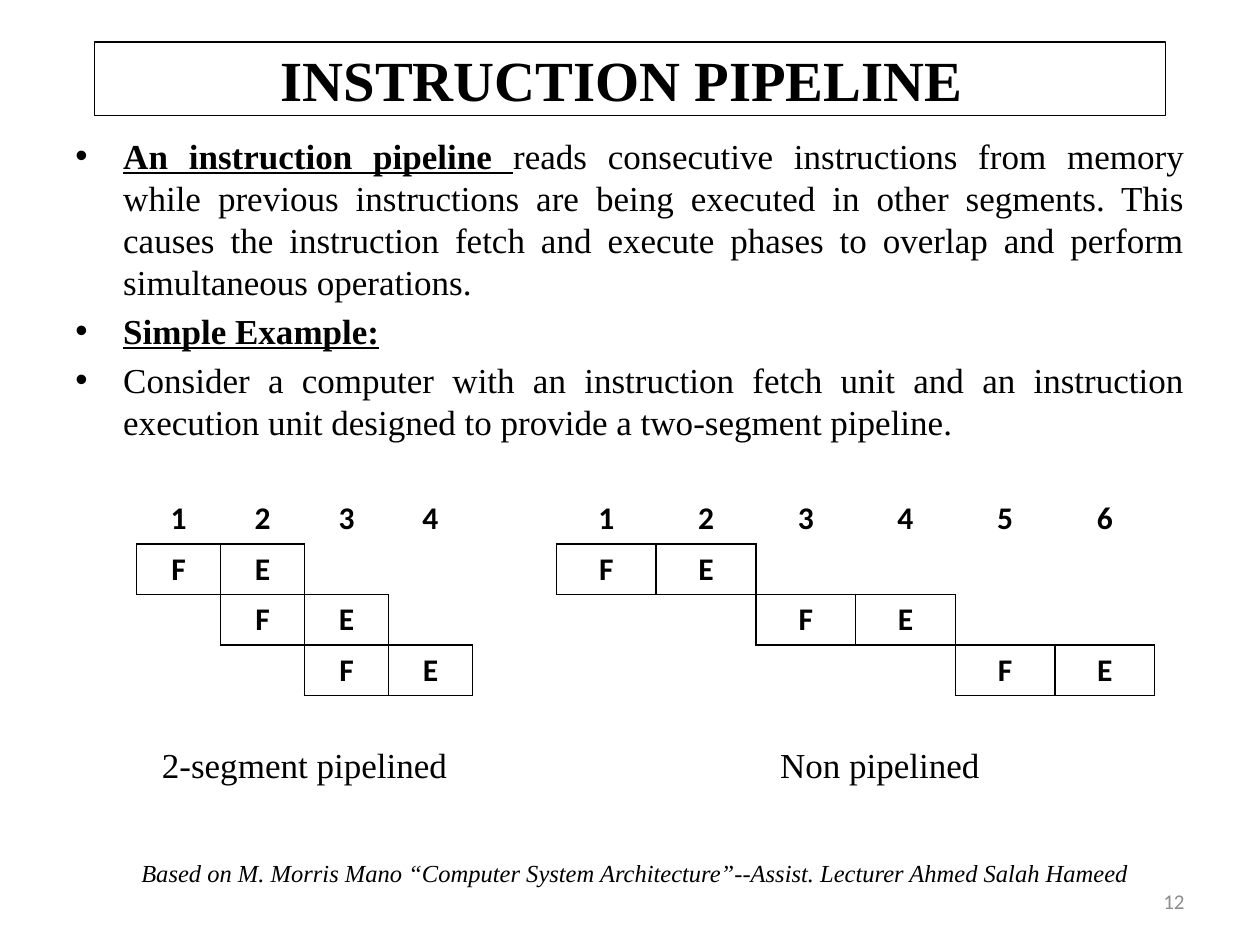
from dataclasses import dataclass

from lxml import etree
from pptx import Presentation
from pptx.dml.color import RGBColor
from pptx.enum.shapes import MSO_SHAPE
from pptx.enum.text import MSO_ANCHOR, PP_ALIGN
from pptx.oxml.ns import qn
from pptx.util import Inches, Pt

RECTANGLE = MSO_SHAPE.RECTANGLE
TOP, MIDDLE = MSO_ANCHOR.TOP, MSO_ANCHOR.MIDDLE
CENTER, RIGHT, JUSTIFY = PP_ALIGN.CENTER, PP_ALIGN.RIGHT, PP_ALIGN.JUSTIFY

UNIT = Inches(1) / 12  # page grid: 120 columns by 90 rows
COLUMNS, ROWS = 120, 90


@dataclass(frozen=True)
class Theme:
    serif: str = "Times New Roman"
    sans: str = "Calibri"
    ink: str = "000000"
    muted: str = "8C8C8C"
    title: float = 32.4
    body: float = 20
    line: float = 24
    gap: float = 4
    cell: float = 18
    footer: float = 14
    number: float = 12
    outline: float = 0.75
    border: float = 1


THEME = Theme()


def grid(*lengths):
    return [round(length * UNIT) for length in lengths]


def add_span(para, text, size=THEME.body, font=THEME.serif, color=THEME.ink,
             bold=False, italic=False, underline=False):
    span = para.add_run()
    span.text = text
    style = span.font
    style.size, style.name = Pt(size), font
    style.bold, style.italic, style.underline = bold, italic, underline
    style.color.rgb = RGBColor.from_string(color)


def add_label(page, area, text, align=CENTER, anchor=TOP, **style):
    box = page.shapes.add_textbox(*grid(*area))
    frame = box.text_frame
    frame.word_wrap = True
    frame.vertical_anchor = anchor
    para = frame.paragraphs[0]
    para.alignment = align
    add_span(para, text, **style)


def add_bullet(para, indent):
    properties = para._p.get_or_add_pPr()
    properties.set("marL", str(indent))
    properties.set("indent", str(-indent))
    etree.SubElement(properties, qn("a:buFont")).set("typeface", "Arial")
    etree.SubElement(properties, qn("a:buChar")).set("char", "•")


def add_title(page, area, text):
    box = page.shapes.add_shape(RECTANGLE, *grid(*area))
    box.shadow.inherit = False
    box.fill.background()
    box.line.color.rgb = RGBColor.from_string(THEME.ink)
    box.line.width = Pt(THEME.outline)
    frame = box.text_frame
    frame.word_wrap = True
    frame.vertical_anchor = MIDDLE
    frame.margin_top = frame.margin_bottom = 0
    frame.margin_right = Inches(0.23)  # sets the heading slightly left
    para = frame.paragraphs[0]
    para.alignment = CENTER
    add_span(para, text, size=THEME.title, bold=True)


def add_body(page, area, items):
    """Each item is a pair: an underlined lead and the plain text after it."""
    frame = page.shapes.add_textbox(*grid(*area)).text_frame
    frame.word_wrap = True
    for index, (lead, rest) in enumerate(items):
        para = frame.add_paragraph() if index else frame.paragraphs[0]
        para.alignment = JUSTIFY
        para.line_spacing = Pt(THEME.line)
        para.space_before = Pt(THEME.gap if index else 0)
        add_bullet(para, Inches(0.38))
        if lead:
            add_span(para, lead, bold=True, underline=True)
        if rest:
            add_span(para, rest)


def set_borders(cell, sides):
    """sides tells for left, right, top and bottom whether a line shows."""
    properties = cell._tc.get_or_add_tcPr()
    for position, (name, shown) in enumerate(zip("LRTB", sides)):
        line = etree.Element(qn(f"a:ln{name}"), w=str(Pt(THEME.border)))
        if shown:
            fill = etree.SubElement(line, qn("a:solidFill"))
            etree.SubElement(fill, qn("a:srgbClr")).set("val", THEME.ink)
        else:
            etree.SubElement(line, qn("a:noFill"))
        properties.insert(position, line)


def add_timing(page, area, cycles, step, instructions=3):
    """Each instruction is fetched, then executed, step cycles after the last."""
    phases = {(row + 1, row * step + offset): phase
              for row in range(instructions)
              for offset, phase in enumerate("FE")}
    table = page.shapes.add_table(instructions + 1, cycles, *grid(*area)).table
    table.first_row = table.horz_banding = False
    for row in range(instructions + 1):
        for column in range(cycles):
            cell = table.cell(row, column)
            cell.fill.background()
            neighbours = [(row, column - 1), (row, column + 1),
                          (row - 1, column), (row + 1, column)]
            # A line shows wherever either cell beside it holds a phase
            set_borders(cell, [(row, column) in phases or near in phases
                               for near in neighbours])
            text = phases.get((row, column), "") if row else str(column + 1)
            para = cell.text_frame.paragraphs[0]
            para.alignment = CENTER
            if text:
                add_span(para, text, size=THEME.cell, font=THEME.sans, bold=True)
            else:
                para.font.size = Pt(THEME.cell)


def build_slide(deck):
    page = deck.slides.add_slide(deck.slide_layouts[6])

    # Heading and explanation
    add_title(page, (9, 4, 102, 7), "INSTRUCTION PIPELINE")
    add_body(page, (6, 12.2, 108, 31), [
        ("An instruction pipeline ",
         "reads consecutive instructions from memory while previous instructions "
         "are being executed in other segments. This causes the instruction fetch "
         "and execute phases to overlap and perform simultaneous operations."),
        ("Simple Example:", ""),
        ("", "Consider a computer with an instruction fetch unit and an instruction "
             "execution unit designed to provide a two-segment pipeline."),
    ])

    # Timing tables and their captions
    add_timing(page, (13, 47, 32, 19.2), cycles=4, step=1)
    add_timing(page, (53, 47, 57, 19.2), cycles=6, step=2)
    add_label(page, (13, 70.4, 32, 4.8), "2-segment pipelined", anchor=MIDDLE)
    add_label(page, (55.3, 70.4, 57, 4.8), "Non pipelined", anchor=MIDDLE)

    # Source line and page number
    add_label(page, (4, 81.1, 113, 4),
              "Based on M. Morris Mano “Computer System Architecture”"
              "--Assist. Lecturer Ahmed Salah Hameed",
              size=THEME.footer, italic=True)
    add_label(page, (86, 83.4, 28, 4.8), "12", align=RIGHT, anchor=MIDDLE,
              size=THEME.number, font=THEME.sans, color=THEME.muted)


def main():
    deck = Presentation()
    deck.slide_width, deck.slide_height = grid(COLUMNS, ROWS)
    build_slide(deck)
    deck.save("out.pptx")


if __name__ == "__main__":
    main()
